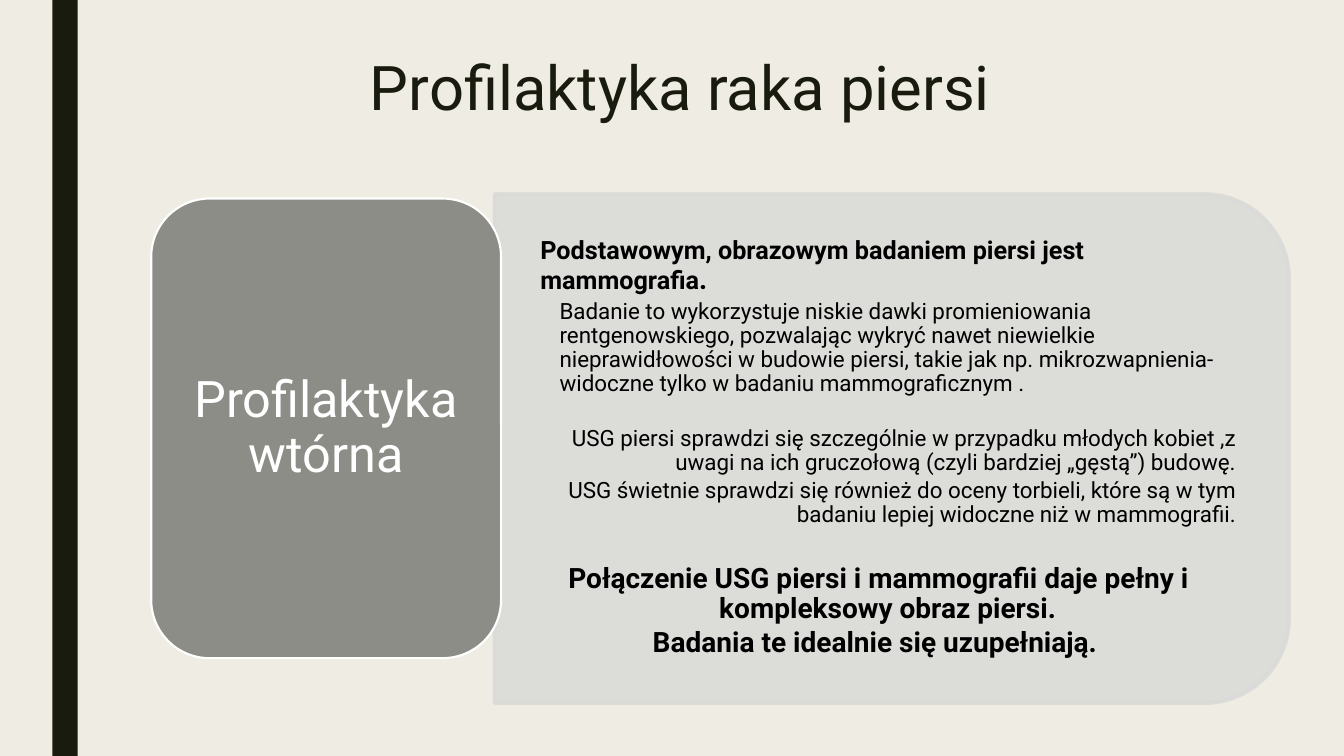
from lxml.etree import SubElement as Sub
from pptx import Presentation
from pptx.dml.color import RGBColor
from pptx.enum.shapes import MSO_SHAPE as Shape
from pptx.enum.text import MSO_ANCHOR as Anchor, PP_ALIGN as Align
from pptx.oxml.ns import qn
from pptx.util import Inches, Pt

CREAM = RGBColor(0xEF, 0xED, 0xE3)
DARK = RGBColor(0x19, 0x1B, 0x0E)
PALE = RGBColor(0xDA, 0xDB, 0xD9)
GREY = RGBColor(0x8C, 0x8D, 0x86)
WHITE = RGBColor(0xFF, 0xFF, 0xFF)
BLACK = RGBColor(0, 0, 0)


def write(par, text, size=16, color=BLACK, bold=False, align=Align.LEFT,
          left=0, hang=0, before=0, after=0, pitch=0.9, font="Roboto"):
    par.alignment, par.line_spacing = align, pitch
    par.space_before, par.space_after = Pt(before), Pt(after)
    props = par._p.get_or_add_pPr()
    props.set("marL", str(Inches(left)))
    props.set("indent", str(-Inches(hang)))
    run = par.add_run()
    run.text = text
    run.font.name, run.font.size, run.font.bold = font, Pt(size), bold
    run.font.color.rgb = color
    return run


class Deck:
    """Holds the presentation, its current slide and the shared style."""

    def __init__(self):
        self.prs = Presentation()
        self.prs.slide_width, self.prs.slide_height = Inches(13.33), Inches(7.5)
        self.slide = self.prs.slides.add_slide(self.prs.slide_layouts[5])
        fill = self.slide.background.fill
        fill.solid()
        fill.fore_color.rgb = CREAM

    def title(self, text, box):
        head = self.slide.shapes.title
        head.left, head.top, head.width, head.height = map(Inches, box)
        head.text_frame.vertical_anchor = Anchor.TOP
        write(head.text_frame.paragraphs[0], text, size=44, color=DARK,
              align=Align.CENTER, pitch=0.89)

    def block(self, kind, box, color, line=None, width=0, turn=0, alpha=None):
        item = self.slide.shapes.add_shape(kind, *map(Inches, box))
        item.shadow.inherit = False
        item.rotation = turn
        item.fill.solid()
        item.fill.fore_color.rgb = color
        if line is None:
            item.line.fill.background()
        else:
            item.line.color.rgb, item.line.width = line, Pt(width)
        if alpha:
            for tint in item._element.spPr.iter(qn("a:srgbClr")):
                Sub(tint, qn("a:alpha"), val=str(alpha * 1000))

    def text(self, box, pads, rows):
        frame = self.slide.shapes.add_textbox(*map(Inches, box)).text_frame
        frame.word_wrap, frame.vertical_anchor = True, Anchor.MIDDLE
        frame.margin_left = frame.margin_right = Inches(pads[0])
        frame.margin_top = frame.margin_bottom = Inches(pads[1])
        for num, (words, style) in enumerate(rows):
            par = frame.add_paragraph() if num else frame.paragraphs[0]
            write(par, words, **style)
        return frame


def main():
    deck = Deck()
    deck.block(Shape.RECTANGLE, (0.52, 0, 0.25, 7.5), DARK)
    deck.title("Profilaktyka raka piersi", (1.5, 0.52, 10.5, 1.62))
    deck.block(Shape.ROUND_2_SAME_RECTANGLE, (6.32, 0.51, 5.05, 7.88), PALE,
               line=PALE, width=2.75, turn=90, alpha=90)

    lead = dict(size=18, bold=True, left=0.19, after=3)
    body = dict(left=0.38, after=2.4)
    scan = dict(align=Align.RIGHT, left=0.19, hang=0.19, after=2.4)
    close = dict(size=20, bold=True, align=Align.CENTER,
                 left=0.25, hang=0.25, after=3)
    frame = deck.text((4.9, 2.17, 7.63, 4.56), (0.27, 0.14), [
        ("Podstawowym, obrazowym badaniem piersi jest mammografia", lead),
        ("Badanie to wykorzystuje niskie dawki promieniowania "
         "rentgenowskiego, pozwalając wykryć nawet niewielkie "
         "nieprawidłowości w budowie piersi, takie jak np. mikrozwapnienia- "
         "widoczne tylko w badaniu mammograficznym .", body),
        ("USG piersi sprawdzi się szczególnie w przypadku młodych kobiet ,z "
         "uwagi na ich gruczołową (czyli bardziej „gęstą”) budowę.",
         scan | dict(before=19.5)),
        ("USG świetnie sprawdzi się również do oceny torbieli, które są w tym "
         "badaniu lepiej widoczne niż w mammografii.", scan),
        ("Połączenie USG piersi i mammografii daje pełny i kompleksowy obraz "
         "piersi. ", close | dict(before=24)),
        ("Badania te idealnie się uzupełniają. ", close),
    ])
    write(frame.paragraphs[0], ".", **lead | dict(size=20))

    deck.block(Shape.ROUNDED_RECTANGLE, (1.5, 1.97, 3.47, 4.56), GREY,
               line=WHITE, width=1.5)
    deck.text((1.67, 2.14, 3.13, 4.23), (0.15, 0.07), [
        ("Profilaktyka wtórna",
         dict(size=36, color=WHITE, align=Align.CENTER))])
    deck.prs.save("out.pptx")


if __name__ == "__main__":
    main()
